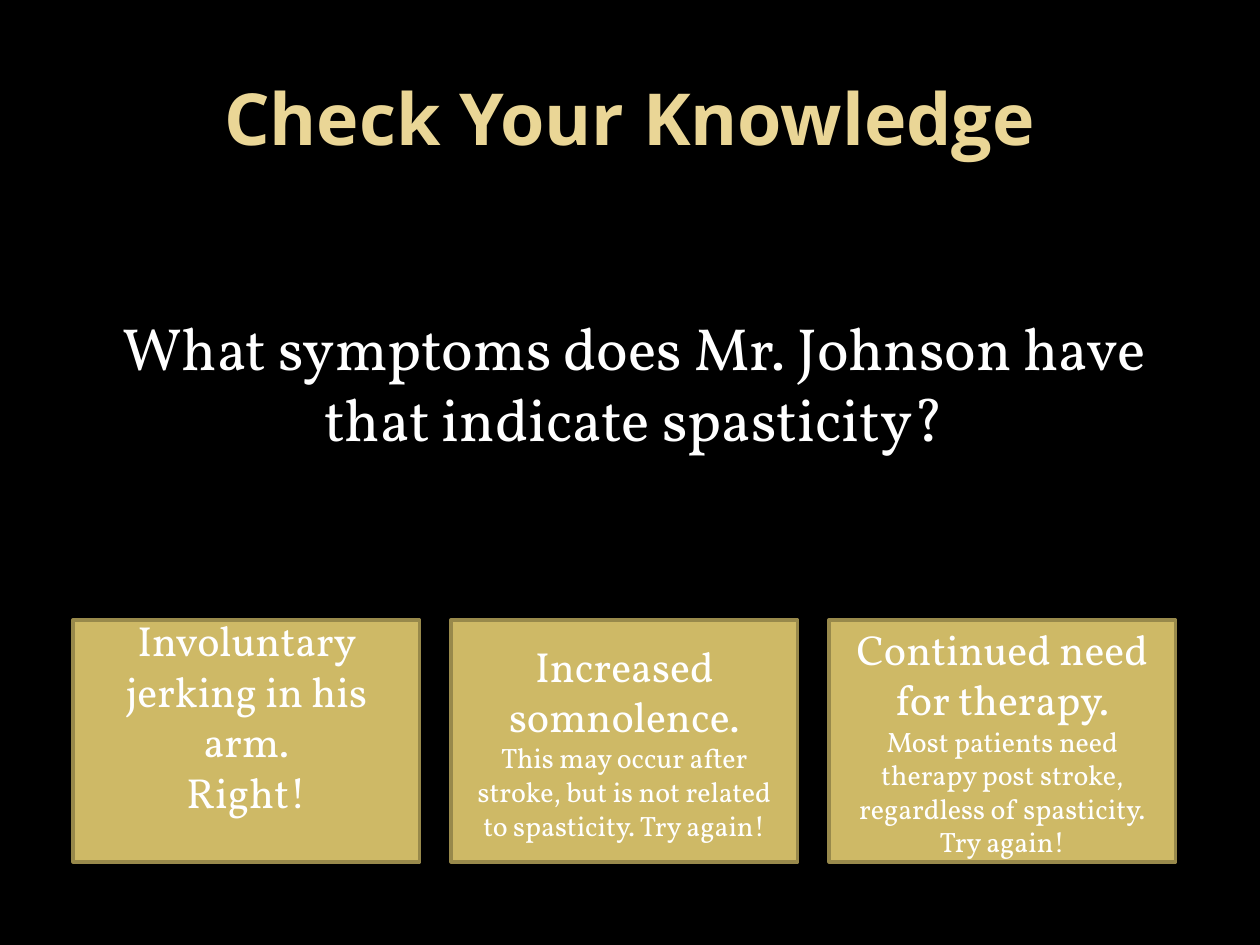
"""Build a quiz slide with a question and three answer boxes."""
from pptx import Presentation
from pptx.dml.color import RGBColor
from pptx.enum.shapes import MSO_SHAPE as Shape
from pptx.enum.text import MSO_ANCHOR as Anchor, PP_ALIGN as Align
from pptx.util import Inches, Pt


def color(value):
    return RGBColor.from_string(value)


def write(box, lines, font_name, font_color, anchor, bold=False):
    frame = box.text_frame
    frame.word_wrap = True
    frame.vertical_anchor = anchor
    for index, (text, size) in enumerate(lines):
        para = frame.add_paragraph() if index else frame.paragraphs[0]
        para.text = text
        para.alignment = Align.CENTER
        para.font.name = font_name
        para.font.size = Pt(size)
        para.font.bold = bold
        para.font.color.rgb = color(font_color)
    return frame


deck = Presentation()
deck.slide_width, deck.slide_height = Inches(10), Inches(7.5)
page = deck.slides.add_slide(deck.slide_layouts[6])
page.background.fill.solid()
page.background.fill.fore_color.rgb = color("000000")

title = page.shapes.add_textbox(Inches(0.5), Inches(0.3), Inches(9), Inches(1.25))
write(title, [("Check Your Knowledge", 41)], "Open Sans", "EAD696", Anchor.MIDDLE, True)

question = page.shapes.add_textbox(Inches(0.46), Inches(2.42), Inches(9), Inches(1.17))
question_text = "What symptoms does Mr. Johnson have that indicate spasticity?"
frame = write(question, [(question_text, 34)], "Vollkorn", "FFFFFF", Anchor.TOP)
frame.margin_left = Inches(0.25)

answers = [
    ([("Involuntary jerking in his arm.", 24), ("Right!", 24)], 0.45),
    ([("Increased somnolence.", 24),
      ("This may occur after stroke, but is not related to spasticity. Try again!", 16)], 0.05),
    ([("Continued need for therapy.", 24),
      ("Most patients need therapy post stroke, regardless of spasticity. Try again!", 16)], 0.05),
]
for column, (lines, bottom_margin) in enumerate(answers):
    box = page.shapes.add_shape(
        Shape.RECTANGLE, Inches(0.58 + 3 * column), Inches(4.92), Inches(2.75), Inches(1.92))
    box.shadow.inherit = False
    box.fill.solid()
    box.fill.fore_color.rgb = color("CEB966")
    box.line.color.rgb = color("98894B")
    box.line.width = Pt(2)
    frame = write(box, lines, "Vollkorn", "FFFFFF", Anchor.MIDDLE)
    frame.margin_bottom = Inches(bottom_margin)

deck.save("out.pptx")
